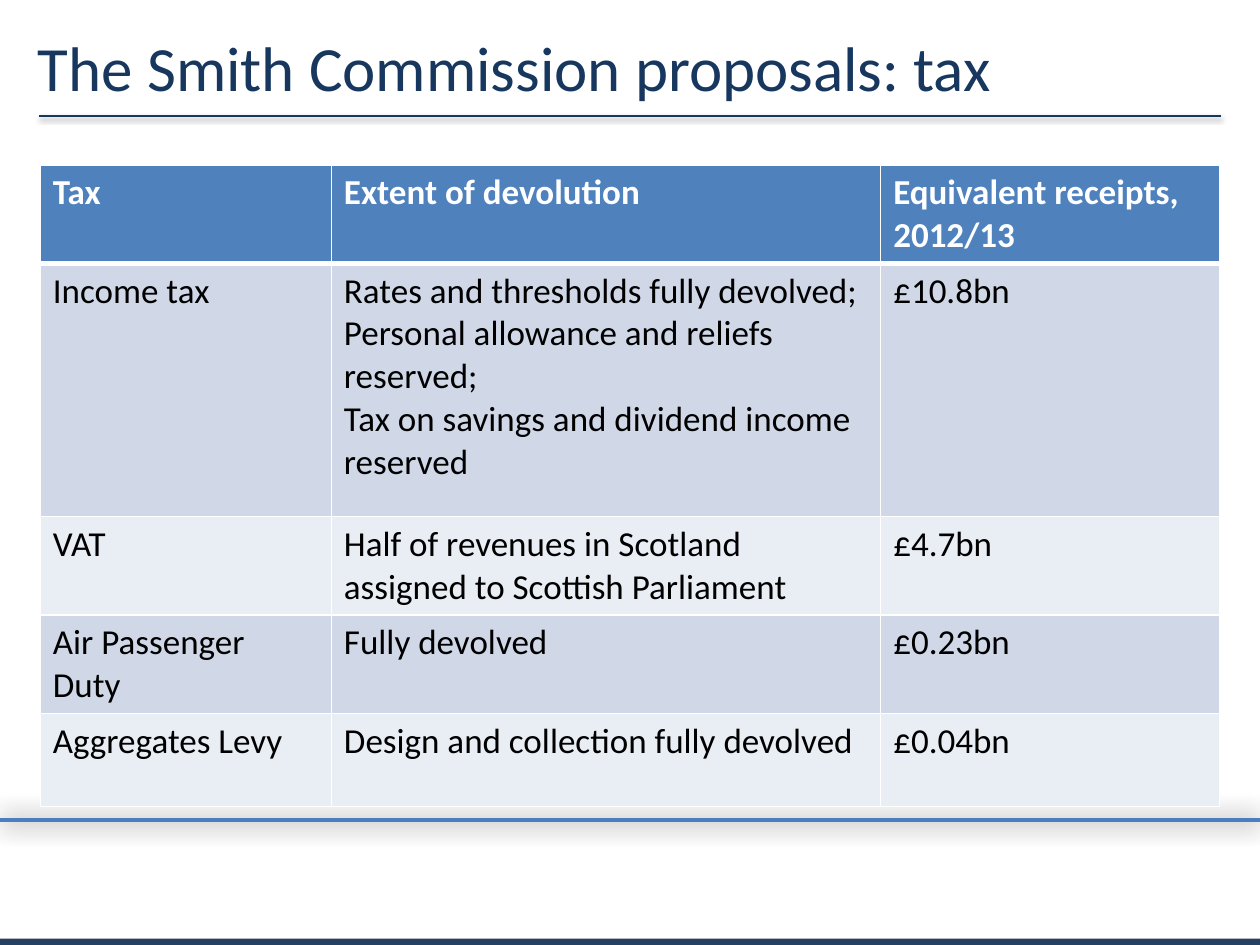
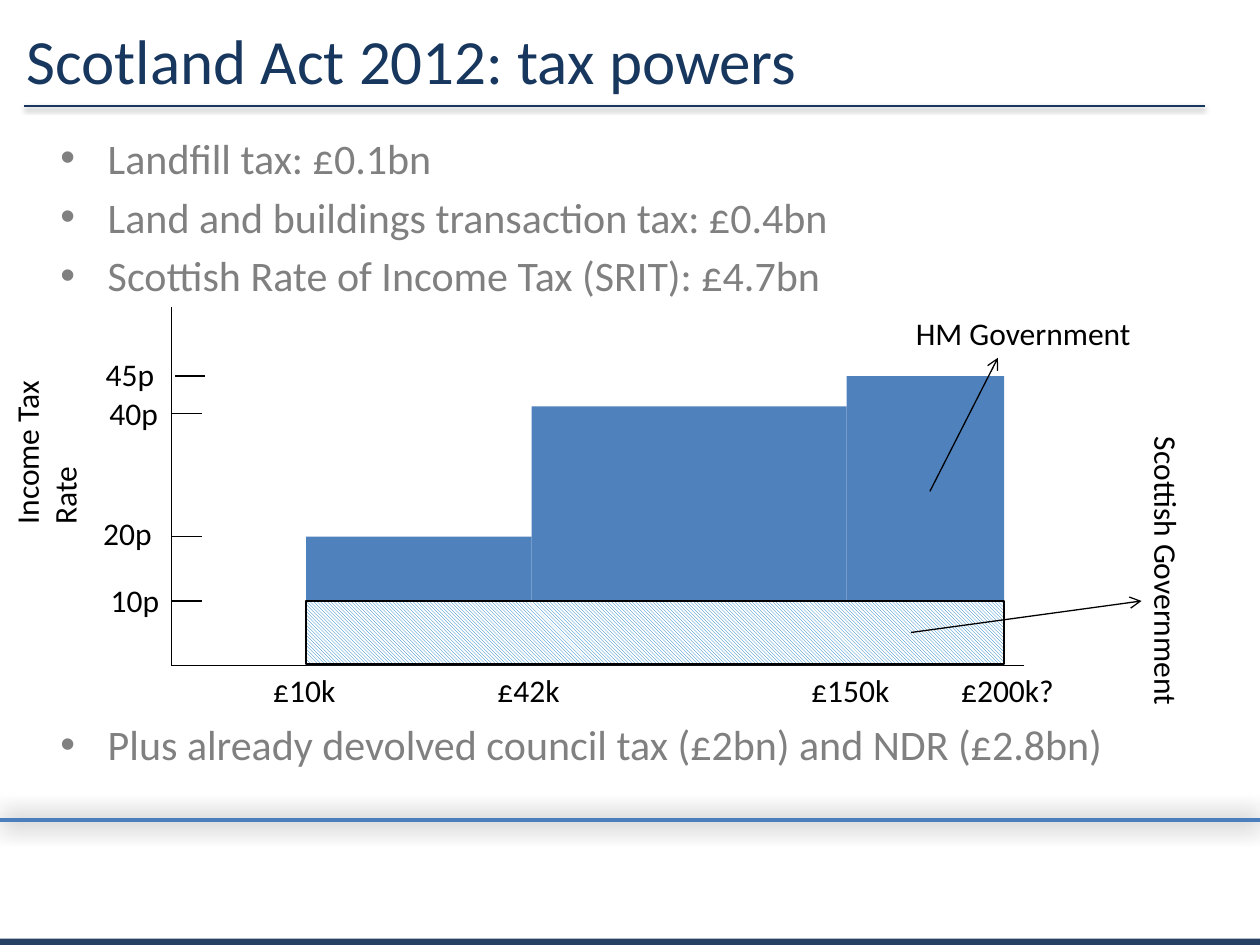
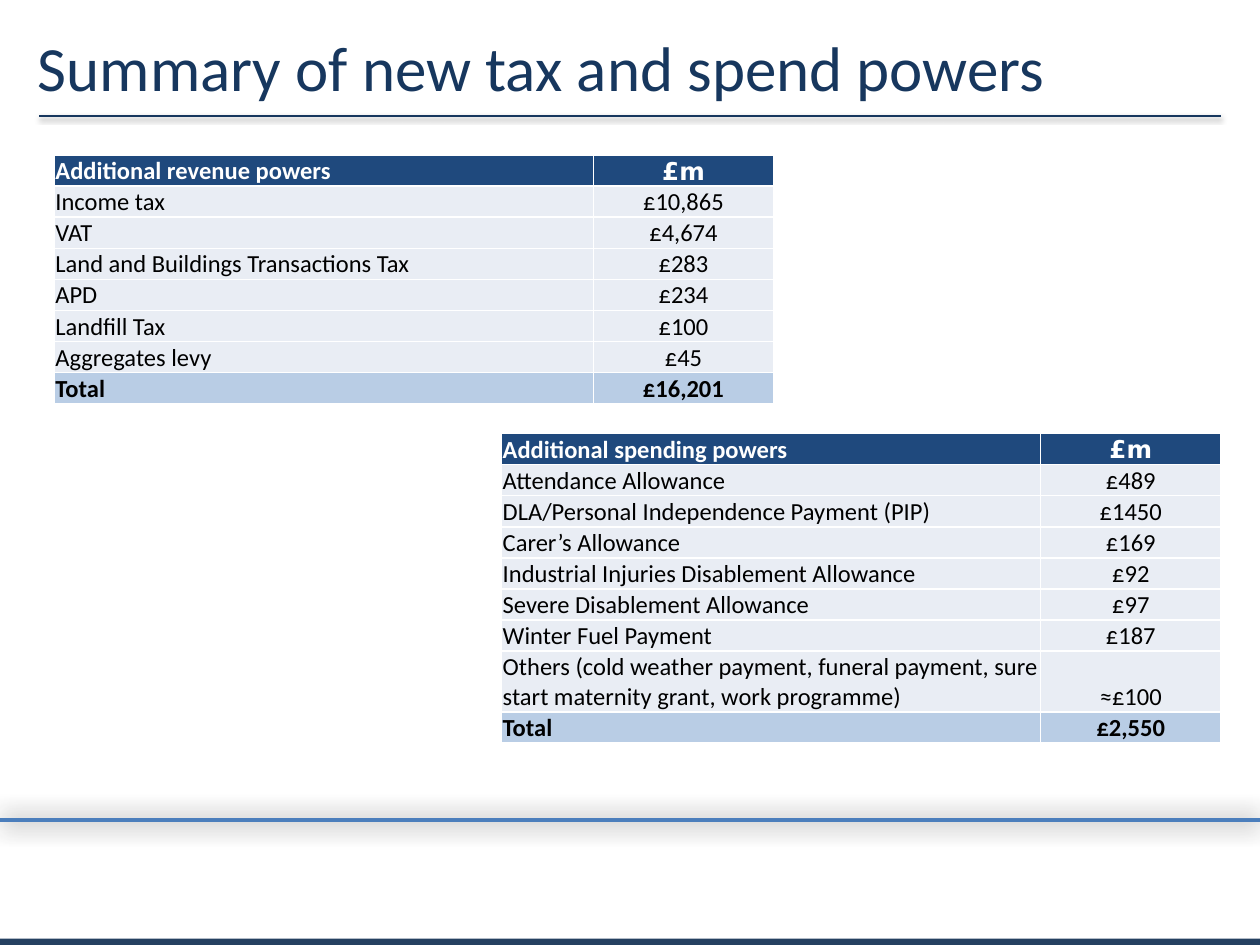
from collections import namedtuple

from lxml import etree
from pptx import Presentation
from pptx import util as u
from pptx.dml.color import RGBColor
from pptx.enum import dml, shapes, text
from pptx.oxml import ns

NAVY = RGBColor(0x17, 0x37, 0x5E)
BAND = RGBColor(0x25, 0x40, 0x61)
FOOT_BLUE = RGBColor(0x4B, 0x7E, 0xBC)
BLUE = RGBColor(0x4F, 0x81, 0xBD)
DEEP_BLUE = RGBColor(0x1F, 0x49, 0x7D)
HATCH_BLUE = RGBColor(0x00, 0x70, 0xC0)
TOTAL_BLUE = RGBColor(0xB9, 0xCD, 0xE5)
STRIPE_DARK = RGBColor(0xD0, 0xD8, 0xE8)
STRIPE_LIGHT = RGBColor(0xE9, 0xED, 0xF4)
GREY = RGBColor(0x80, 0x80, 0x80)
BLACK = RGBColor(0, 0, 0)
WHITE = RGBColor(0xFF, 0xFF, 0xFF)

COLUMNS, ROWS = 100, 75
Box = namedtuple("Box", "left top width height")
TITLE_BOX = Box(2, 1.3, 94.5, 7.9)
RULE = Box(3.1, 9.2, 93.8, 0)
LEFT, CENTRE = text.PP_ALIGN.LEFT, text.PP_ALIGN.CENTER


def grid(value):
    return u.Inches(value / 10)


def lengths(box):
    return [grid(value) for value in box]


def inside(area, left, top, width, height):
    return Box(area.left + left, area.top + top, width, height)


def write(frame, lines, size=18, color=BLACK, bold=False, font="Calibri", align=LEFT, gaps=()):
    for index, line in enumerate(lines):
        para = frame.paragraphs[0] if index == 0 else frame.add_paragraph()
        para.alignment = align
        if gaps:
            para.space_before = u.Pt(gaps[index])
        span = para.add_run()
        span.text = line
        span.font.size = u.Pt(size)
        span.font.name = font
        span.font.bold = bold
        span.font.color.rgb = color


def draw_line(page, start, end, color=BLACK, weight=0.75, shadow=None, arrow=False):
    line = page.shapes.add_connector(
        shapes.MSO_CONNECTOR.STRAIGHT, *map(grid, start), *map(grid, end))
    line.line.color.rgb = color
    line.line.width = u.Pt(weight)
    if arrow:
        etree.SubElement(line.line._get_or_add_ln(), ns.qn("a:tailEnd"), type="arrow")
    effects = etree.SubElement(line._element.spPr, ns.qn("a:effectLst"))
    if shadow:
        opacity, blur, distance = shadow
        outer = etree.SubElement(
            effects, ns.qn("a:outerShdw"), blurRad=str(u.Pt(blur)),
            dist=str(u.Pt(distance)), dir="5400000", rotWithShape="0")
        tint = etree.SubElement(outer, ns.qn("a:srgbClr"), val=str(BLACK))
        etree.SubElement(tint, ns.qn("a:alpha"), val=str(opacity * 1000))


def draw_rectangle(page, box, color):
    shape = page.shapes.add_shape(shapes.MSO_SHAPE.RECTANGLE, *lengths(box))
    shape.shadow.inherit = False
    shape.fill.solid()
    shape.fill.fore_color.rgb = color
    shape.line.fill.background()
    return shape


def add_label(page, box, lines, rotation=0):
    label = page.shapes.add_textbox(*lengths(box))
    label.rotation = rotation
    label.text_frame.word_wrap = False
    label.text_frame.auto_size = text.MSO_AUTO_SIZE.SHAPE_TO_FIT_TEXT
    write(label.text_frame, lines)


def place(holder, box):
    holder.left, holder.top, holder.width, holder.height = lengths(box)
    holder.text_frame.auto_size = text.MSO_AUTO_SIZE.NONE
    return holder.text_frame


def add_page(deck, layout, title, title_box=TITLE_BOX, rule=RULE):
    page = deck.slides.add_slide(deck.slide_layouts.get_by_name(layout))
    draw_line(page, (0, 65.1), (COLUMNS, 65.1), FOOT_BLUE, 2.5, shadow=(80, 14, 0))
    frame = place(page.shapes.title, title_box)
    frame.vertical_anchor = text.MSO_ANCHOR.MIDDLE
    write(frame, [title], size=36, color=NAVY)
    draw_line(page, (rule.left, rule.top), (rule.left + rule.width, rule.top),
              NAVY, 1, shadow=(38, 3.1, 1.6))
    draw_rectangle(page, Box(0, ROWS - 0.5, COLUMNS, 0.5), BAND)
    return page


def set_borders(cell, bottom=1):
    properties = cell._tc.get_or_add_tcPr()
    for side, weight in zip("LRTB", (1, 1, 1, bottom)):
        border = etree.SubElement(properties, ns.qn("a:ln" + side), w=str(u.Pt(weight)))
        paint = etree.SubElement(border, ns.qn("a:solidFill"))
        etree.SubElement(paint, ns.qn("a:srgbClr"), val=str(WHITE))


def fill_cell(cell, lines, fill, bottom=1, **style):
    set_borders(cell, bottom)
    cell.fill.solid()
    cell.fill.fore_color.rgb = fill
    write(cell.text_frame, lines, **style)


def add_grid(page, box, widths, heights):
    table = page.shapes.add_table(len(heights), len(widths), *lengths(box)).table
    for column, width in zip(table.columns, widths):
        column.width = grid(width)
    for row, height in zip(table.rows, heights):
        row.height = grid(height)
    return table


def add_devolution_table(page, box, records):
    heights = [7.4, 20.1, 7.4, 6.5, 7.4]
    table = add_grid(page, box, [23.1, 43.6, 26.9], heights)
    for row, record in enumerate(records):
        header = row == 0
        fill = BLUE if header else STRIPE_DARK if row % 2 else STRIPE_LIGHT
        for column, words in enumerate(record):
            fill_cell(table.cell(row, column), words.split("\n"), fill,
                      bottom=3 if header else 1, size=20, bold=header,
                      color=WHITE if header else BLACK)


def add_powers_table(page, box, heading, entries, total):
    records = [(heading, "£m"), *entries, ("Total", total)]
    heights = [4.8 if len(name) > 60 else 2.4 for name, amount in records]
    table = add_grid(page, box, [42.8, 14.3], heights)
    last = len(records) - 1
    fills = {0: DEEP_BLUE, last: TOTAL_BLUE}
    for row, record in enumerate(records):
        for column, words in enumerate(record):
            cell = table.cell(row, column)
            cell.vertical_anchor = text.MSO_ANCHOR.BOTTOM
            cell.margin_left = cell.margin_right = cell.margin_top = u.Inches(0.01)
            cell.margin_bottom = 0
            fill_cell(cell, [words], fills.get(row, STRIPE_LIGHT), size=14,
                      bold=row in fills, color=BLACK if row else WHITE,
                      font="DejaVu Sans" if row == 0 and column else "Calibri",
                      align=CENTRE if column else LEFT)


def add_rate_diagram(page, area):
    base = area.top + area.height
    per_penny = 0.51

    def level(pence):
        return base - pence * per_penny

    draw_line(page, (area.left, area.top), (area.left, base))
    draw_line(page, (area.left + area.width, base), (area.left, base))
    add_label(page, inside(area, -17.4, 7.2, 14.9, 7.1), ["Income Tax", "Rate"], 270)

    ticks = [("45p", 45, 0.3, -6.2, 3.3), ("40p", 39.2, 0, -5.9, 6.4),
             ("20p", 20, 0, -6.4, 15.9), ("10p", 10, 0, -5.8, 21.2)]
    for name, pence, shift, left, top in ticks:
        start = area.left + shift
        draw_line(page, (start, level(pence)), (start + 2.4, level(pence)))
        add_label(page, inside(area, left, top, 6.2, 4), [name])

    edges = [10.7, 28.6, 53.6, 66.1]
    for left, right, pence in zip(edges, edges[1:], (20, 40.3, 45)):
        height = pence * per_penny
        draw_rectangle(page, inside(area, left, area.height - height, right - left, height), BLUE)
    thresholds = [("£10k", 7.1, 7.5), ("£42k", 24.9, 7), ("£150k", 49.8, 8.9), ("£200k?", 61.7, 10.3)]
    for name, left, width in thresholds:
        add_label(page, inside(area, left, area.height, width, 4), [name])

    share = draw_rectangle(
        page, inside(area, edges[0], area.height - 5.1, edges[-1] - edges[0], 5), WHITE)
    share.fill.patterned()
    share.fill.pattern = dml.MSO_PATTERN.DARK_DOWNWARD_DIAGONAL
    share.fill.fore_color.rgb = HATCH_BLUE
    share.fill.back_color.rgb = WHITE
    share.line.color.rgb = BLACK
    share.line.width = u.Pt(0.75)

    receivers = [("Scottish Government", (58.7, 25.8), (77, 23.3), (66.2, 20.1, 25.6, 4), 90),
                 ("HM Government", (60.2, 14.6), (65.6, 4), (58.1, 0, 20.5, 4), 0)]
    for name, start, end, spot, rotation in receivers:
        points = [(area.left + x, area.top + y) for x, y in (start, end)]
        draw_line(page, *points, arrow=True)
        add_label(page, inside(area, *spot), [name], rotation)


def build_proposals(deck):
    page = add_page(deck, "Title Only", "The Smith Commission proposals: tax")
    add_devolution_table(page, Box(3.2, 13.1, 93.6, 48.8), [
        ("Tax", "Extent of devolution", "Equivalent receipts, 2012/13"),
        ("Income tax",
         "Rates and thresholds fully devolved;\nPersonal allowance and reliefs reserved;\n"
         "Tax on savings and dividend income reserved", "£10.8bn"),
        ("VAT", "Half of revenues in Scotland assigned to Scottish Parliament", "£4.7bn"),
        ("Air Passenger Duty", "Fully devolved", "£0.23bn"),
        ("Aggregates Levy", "Design and collection fully devolved", "£0.04bn"),
    ])


def build_tax_powers(deck):
    page = add_page(deck, "Title and Content", "Scotland Act 2012: tax powers",
                    Box(1.1, 0.1, 94.5, 9.2), Box(1.9, 8.4, 93.7, 0))
    body = place(page.placeholders[1], Box(3.8, 10, 90, 57.9))
    write(body, ["Landfill tax: £0.1bn",
                 "Land and buildings transaction tax: £0.4bn",
                 "Scottish Rate of Income Tax (SRIT): £4.7bn",
                 "Plus already devolved council tax (£2bn) and NDR (£2.8bn)"],
          size=24, color=GREY, gaps=(0, 4.8, 4.8, 239))
    add_rate_diagram(page, Box(13.6, 24.4, 67.7, 28.4))


def build_summary(deck):
    page = add_page(deck, "Title Only", "Summary of new tax and spend powers")
    add_powers_table(page, Box(39.8, 34.4, 57.1, 24), "Additional spending powers", [
        ("Attendance Allowance", "£489"),
        ("DLA/Personal Independence Payment (PIP)", "£1450"),
        ("Carer’s Allowance", "£169"),
        ("Industrial Injuries Disablement Allowance", "£92"),
        ("Severe Disablement Allowance", "£97"),
        ("Winter Fuel Payment", "£187"),
        ("Others (cold weather payment, funeral payment, sure start maternity grant, "
         "work programme)", "≈£100"),
    ], "£2,550")
    add_powers_table(page, Box(4.3, 12.3, 57.1, 19.2), "Additional revenue powers", [
        ("Income tax", "£10,865"),
        ("VAT", "£4,674"),
        ("Land and Buildings Transactions Tax", "£283"),
        ("APD", "£234"),
        ("Landfill Tax", "£100"),
        ("Aggregates levy", "£45"),
    ], "£16,201")


def main():
    deck = Presentation()
    deck.slide_width, deck.slide_height = grid(COLUMNS), grid(ROWS)
    build_proposals(deck)
    build_tax_powers(deck)
    build_summary(deck)
    deck.save("out.pptx")


if __name__ == "__main__":
    main()
